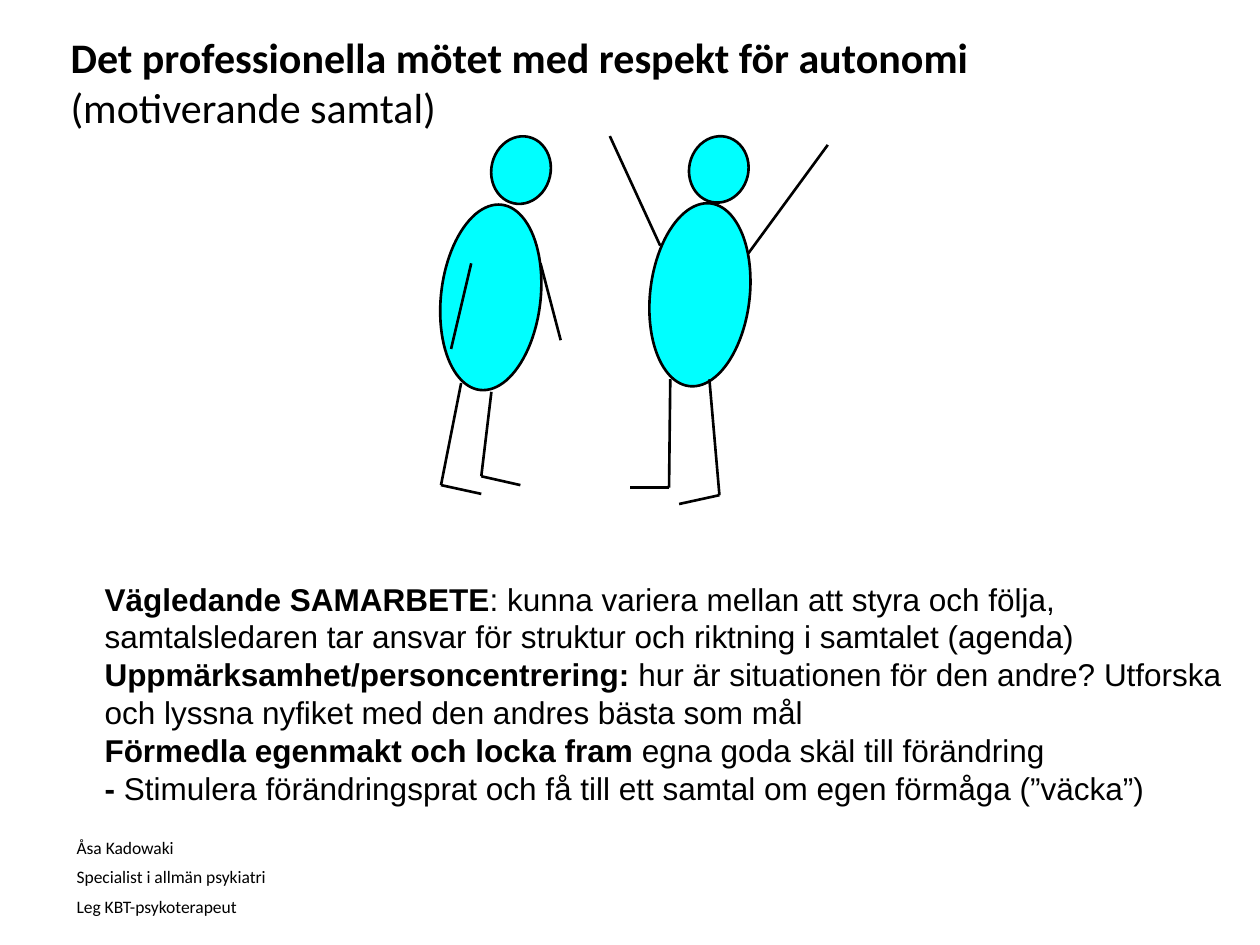
from pptx import Presentation
from pptx import util as u
from pptx.dml.color import RGBColor
from pptx.enum import shapes, text
from pptx.oxml.ns import qn
from lxml import etree

SIZE = (10, 7.5)
INK, SKIN = "000000", "00FFFF"

TITLE = [[("Det professionella mötet med respekt för autonomi ", True),
          ("(motiverande samtal)", False)]]
BODY = [
    [("Vägledande SAMARBETE", True),
     (": kunna variera mellan att styra och följa, samtalsledaren tar ansvar "
      "för struktur och riktning i samtalet (agenda)", False)],
    [("Uppmärksamhet/personcentrering: ", True),
     ("hur är situationen för den andre? Utforska och lyssna nyfiket "
      "med den andres bästa som mål", False)],
    [("Förmedla egenmakt och locka fram", True),
     (" egna goda skäl till förändring", False)],
    [("- ", True),
     ("Stimulera förändringsprat och få till ett samtal om egen förmåga (”väcka”)", False)],
]
AUTHOR = [[(line, False)] for line in
          ("Åsa Kadowaki", "Specialist i allmän psykiatri", "Leg KBT-psykoterapeut")]

FIGURES = [
    {"ovals": [(3.5, 1.62, 0.79, 1.48, 6.6), (3.9, 1.08, 0.47, 0.54, 13)],
     "limbs": [[(3.66, 3.04), (3.5, 3.85), (3.82, 3.92)],
               [(3.9, 3.11), (3.82, 3.78), (4.13, 3.85)],
               [(4.29, 2.09), (4.45, 2.7)],
               [(3.74, 2.09), (3.58, 2.77)]]},
    {"ovals": [(5.47, 1.08, 0.47, 0.53, 13), (5.16, 1.61, 0.79, 1.46, 6.6)],
     "limbs": [[(6.57, 1.15), (5.94, 2.01)],
               [(5.63, 3.01), (5.71, 3.93), (5.39, 4)],
               [(5.32, 3.01), (5.31, 3.87), (5, 3.87)],
               [(4.84, 1.08), (5.24, 1.95)]]},
]


def color(code):
    return RGBColor.from_string(code)


def inches(*nums):
    return [u.Inches(n) for n in nums]


def stroke(item):
    item.line.color.rgb = color(INK)
    item.line.width = u.Pt(1.5)


def draw(slide, figure):
    group = slide.shapes.add_group_shape().shapes
    for *box, turn in figure["ovals"]:
        oval = group.add_shape(shapes.MSO_SHAPE.OVAL, *inches(*box))
        oval.rotation = turn
        oval.shadow.inherit = False
        oval.fill.solid()
        oval.fill.fore_color.rgb = color(SKIN)
        stroke(oval)
    for limb in figure["limbs"]:
        for start, end in zip(limb, limb[1:]):
            line = group.add_connector(shapes.MSO_CONNECTOR.STRAIGHT, *inches(*start, *end))
            stroke(line)
            etree.SubElement(line._element.spPr, qn("a:effectLst"))


def write(shape, box, paras, font, size, gap=0):
    shape.left, shape.top, shape.width, shape.height = inches(*box)
    frame = shape.text_frame
    frame.word_wrap = True
    frame.auto_size = text.MSO_AUTO_SIZE.NONE
    frame.vertical_anchor = text.MSO_ANCHOR.TOP
    for i, runs in enumerate(paras):
        para = frame.add_paragraph() if i else frame.paragraphs[0]
        para.alignment = text.PP_ALIGN.LEFT
        para.space_before = u.Pt(gap)
        props = para._p.get_or_add_pPr()
        props.set("marL", "0")
        props.set("indent", "0")
        etree.SubElement(props, qn("a:buNone"))
        for words, bold in runs:
            run = para.add_run()
            run.text = words
            run.font.name = font
            run.font.size = u.Pt(size)
            run.font.bold = bold
            run.font.color.rgb = color(INK)


def main():
    deck = Presentation()
    deck.slide_width, deck.slide_height = inches(*SIZE)
    slide = deck.slides.add_slide(deck.slide_layouts[1])
    for figure in FIGURES:
        draw(slide, figure)
    title, body = slide.placeholders
    note = slide.shapes.add_textbox(0, 0, 0, 0)
    write(title, (0.46, 0.2, 8.76, 0.91), TITLE, "Calibri", 24)
    write(body, (0.73, 4.55, 9.17, 2.52), BODY, "Arial", 18)
    write(note, (0.51, 6.59, 2.2, 0.77), AUTHOR, "Calibri", 10, gap=5)
    deck.save("out.pptx")


if __name__ == "__main__":
    main()
